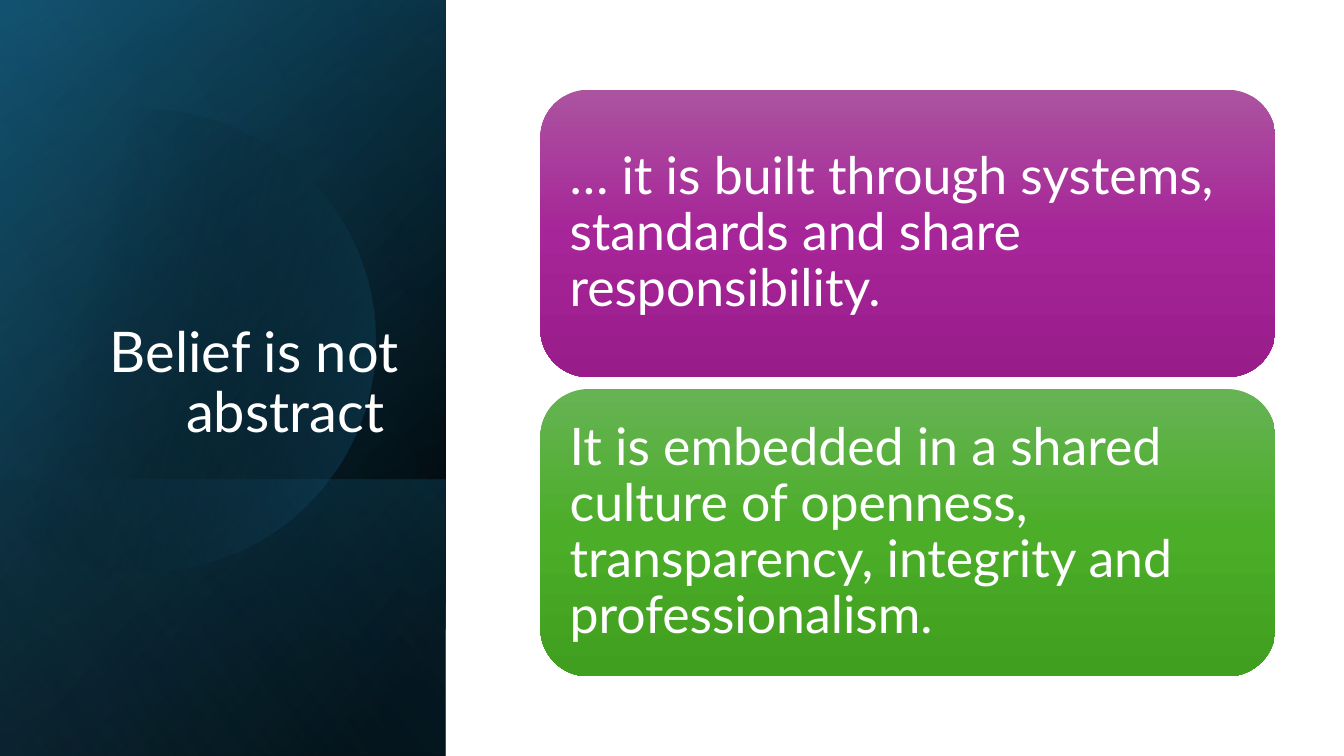
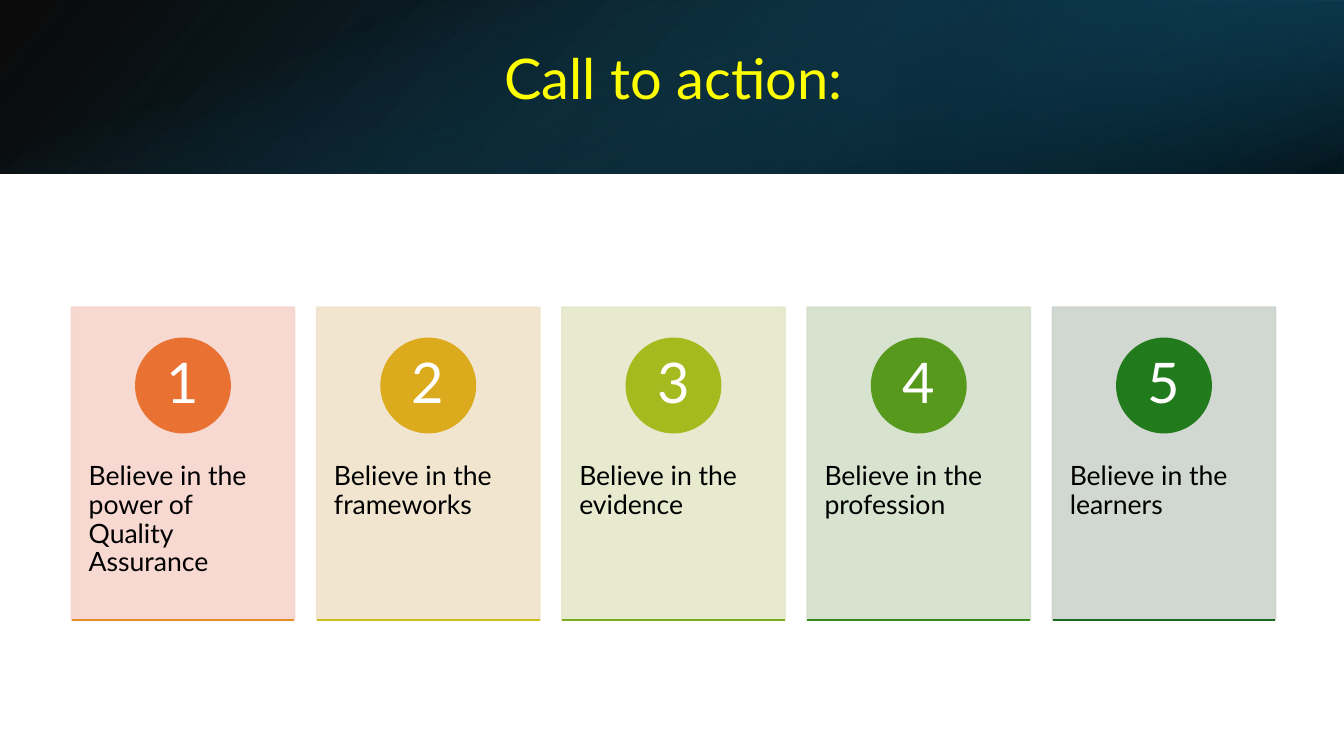
from math import acos, cos, pi, sin

from lxml import etree
from pptx import Presentation
from pptx.dml.color import RGBColor
from pptx.enum.shapes import MSO_CONNECTOR, MSO_SHAPE
from pptx.enum.text import MSO_ANCHOR as ANCHOR, PP_ALIGN as ALIGN
from pptx.oxml.ns import qn
from pptx.util import Inches, Pt


class Theme:
    font = "Lato"
    white, ink, yellow = "FFFFFF", "000000", "FFFF00"
    black, navy, teal, deep, sky = "000000", "104862", "156082", "0B3041", "46B1E1"
    title, statement, number, body = 40, 37, 40, 19
    line = Pt(1.5)
    card_opacity = 90


def paint(s, stops, angle, rotation=0, flip=False):
    """Give a shape a gradient of (position, colour, opacity) stops, all in percent."""
    s.shadow.inherit = False
    s.line.fill.background()
    s.rotation = rotation
    if flip:
        s.element.spPr.xfrm.set("flipH", "1")
    s.fill.gradient()
    s.fill.gradient_angle = 360 - angle
    stop_list = s.element.spPr.find(".//" + qn("a:gsLst"))
    for old in list(stop_list):
        stop_list.remove(old)
    for position, color, opacity in stops:
        gs = etree.SubElement(stop_list, qn("a:gs"), pos=str(position * 1000))
        clr = etree.SubElement(gs, qn("a:srgbClr"), val=color)
        etree.SubElement(clr, qn("a:alpha"), val=str(opacity * 1000))


def write(s, text, size, color, align, anchor, insets=(0.1, 0.05, 0.1, 0.05)):
    tf = s.text_frame
    tf.word_wrap = True
    tf.vertical_anchor = anchor
    tf.margin_left, tf.margin_top, tf.margin_right, tf.margin_bottom = map(Inches, insets)
    p = tf.paragraphs[0]
    p.alignment = align
    p.line_spacing = 0.9
    r = p.add_run()
    r.text = text
    r.font.name = Theme.font
    r.font.size = Pt(size)
    r.font.color.rgb = RGBColor.from_string(color)


prs = Presentation()
prs.slide_width, prs.slide_height = Inches(13.33), Inches(7.5)
blank = prs.slide_layouts[6]

# Slide 1: side panel and two statements
shapes = prs.slides.add_slide(blank).shapes
full_panel = (-1.54, 1.54, 7.5, 4.42)
panel_layers = [
    (full_panel, [(8, Theme.black, 100), (100, Theme.navy, 100)], 50),
    (full_panel, [(0, Theme.black, 0), (99, Theme.teal, 46)], 30),
    ((0.84, 3.92, 2.74, 4.42), [(2, Theme.teal, 29), (100, Theme.black, 30)], 130),
]
for at, stops, angle in panel_layers:
    s = shapes.add_shape(MSO_SHAPE.RECTANGLE, *map(Inches, at))
    paint(s, stops, angle, 90, True)

# Disc cut off by a vertical chord just outside the slide
center_x, center_y, radius, chord_x = 1.43, 3.38, 2.29, -0.15
half_arc = acos((chord_x - center_x) / radius)
steps = 120
arc = [half_arc * (2 * i / steps - 1) for i in range(steps + 1)]
points = [(Inches(center_x + radius * cos(a)), Inches(center_y + radius * sin(a))) for a in arc]
outline = shapes.build_freeform(*points[0])
outline.add_line_segments(points[1:], close=True)
paint(outline.convert_to_shape(), [(29, Theme.black, 0), (100, Theme.teal, 43)], 14)

s = shapes.add_shape(MSO_SHAPE.RECTANGLE, *map(Inches, full_panel))
paint(s, [(0, Theme.black, 0), (99, Theme.sky, 11)], 120, 90, True)

s = shapes.add_textbox(Inches(0.64), Inches(1.84), Inches(3.41), Inches(2.62))
write(s, "Belief is not abstract ", Theme.title, Theme.white, ALIGN.RIGHT, ANCHOR.BOTTOM)

statements = [
    ("… it is built through systems, standards and share responsibility.",
     ("AC53A0", "A62598", "991C8B")),
    ("It is embedded in a shared culture of openness, transparency, integrity and professionalism.",
     ("66B354", "4BAD28", "409F1E")),
]
for i, (text, colors) in enumerate(statements):
    s = shapes.add_shape(MSO_SHAPE.ROUNDED_RECTANGLE, Inches(5.36), Inches(0.89 + 2.97 * i),
                         Inches(7.29), Inches(2.85))
    paint(s, [(50 * n, color, 100) for n, color in enumerate(colors)], 90)
    write(s, text, Theme.statement, Theme.white, ALIGN.LEFT, ANCHOR.MIDDLE, (0.15,) * 4)

# Slide 2: title band and five numbered cards
shapes = prs.slides.add_slide(blank).shapes
band_layers = [
    ((0, 0, 13.33, 1.72), [(0, Theme.black, 96), (100, Theme.navy, 100)], 140, 0, True),
    ((8.89, 0, 4.44, 1.72), [(19, Theme.deep, 68), (100, Theme.teal, 79)], 320, 180, True),
    ((5.8, -5.8, 1.72, 13.33), [(23, Theme.teal, 0), (99, Theme.black, 74)], 340, 90, False),
]
for at, stops, angle, rotation, flip in band_layers:
    s = shapes.add_shape(MSO_SHAPE.RECTANGLE, *map(Inches, at))
    paint(s, stops, angle, rotation, flip)

s = shapes.add_textbox(Inches(1.19), Inches(0.33), Inches(10.98), Inches(0.96))
write(s, "Call to action:", Theme.title, Theme.yellow, ALIGN.CENTER, ANCHOR.MIDDLE)

cards = [
    ("Believe in the power of Quality Assurance", "F7D5CE", "E97132", "E58D25"),
    ("Believe in the frameworks", "F0E3CB", "DCAB1D", "CBC11E"),
    ("Believe in the evidence", "E5E8CA", "A4BA1E", "7AAA1E"),
    ("Believe in the profession", "D3DFCA", "56991D", "398A1C"),
    ("Believe in the learners", "CCD4CD", "217A1B", "196B24"),
]
left, right, top = 0.71, 12.65, 3.05
card_w, card_h, disc_size = 2.21, 3.1, 0.93
pitch = (right - left - card_w) / (len(cards) - 1)
for i, (text, card_color, disc_color, rule_color) in enumerate(cards):
    x = left + pitch * i
    card = shapes.add_shape(MSO_SHAPE.RECTANGLE, Inches(x), Inches(top),
                            Inches(card_w), Inches(card_h))
    disc = shapes.add_shape(MSO_SHAPE.OVAL, Inches(x + (card_w - disc_size) / 2),
                            Inches(top + 0.31), Inches(disc_size), Inches(disc_size))
    for s, color in ((card, card_color), (disc, disc_color)):
        s.shadow.inherit = False
        s.fill.solid()
        s.fill.fore_color.rgb = s.line.color.rgb = RGBColor.from_string(color)
        s.line.width = Theme.line
    for clr in card.element.spPr.iter(qn("a:srgbClr")):
        etree.SubElement(clr, qn("a:alpha"), val=str(Theme.card_opacity * 1000))
    write(card, text, Theme.body, Theme.ink, ALIGN.LEFT, ANCHOR.TOP, (0.17, 1.54, 0.17, 0.36))
    write(disc, str(i + 1), Theme.number, Theme.white, ALIGN.CENTER, ANCHOR.MIDDLE,
          (0.07, 0.01, 0.07, 0.01))

    rule_y = Inches(top + card_h)
    rule = shapes.add_connector(MSO_CONNECTOR.STRAIGHT, Inches(x), rule_y,
                                Inches(x + card_w), rule_y)
    rule.line.color.rgb = RGBColor.from_string(rule_color)
    rule.line.width = Theme.line
    etree.SubElement(rule.element.spPr, qn("a:effectLst"))

prs.save("out.pptx")
